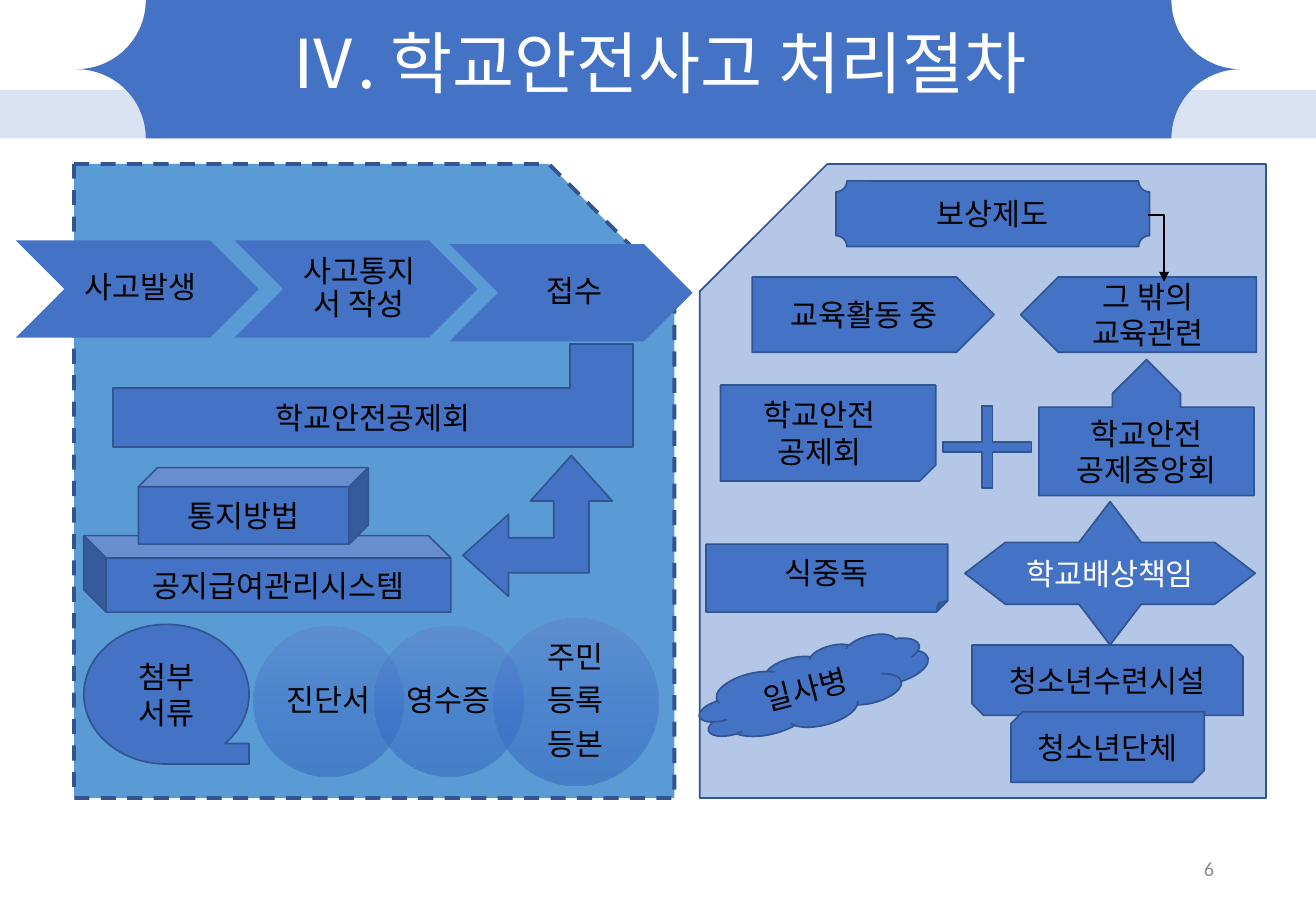
"""Build the slide on the school accident handling procedure."""
from pptx import Presentation
from pptx import util as u
from pptx.dml.color import RGBColor
from pptx.enum import dml, shapes, text
from pptx.oxml import parse_xml
from pptx.oxml.ns import nsdecls, qn

KOREAN = "Noto Sans CJK KR"
BLUE, EDGE, BLACK, WHITE = "4472C4", "325491", "000000", "FFFFFF"
KIND = shapes.MSO_SHAPE


def colour(value):
    return RGBColor.from_string(value)


def write_text(shape, lines, size=18, ink=BLACK, font=KOREAN, align=text.PP_ALIGN.CENTER,
               wrap=True, insets=(0.1, 0.05, 0.1, 0.05), spacing=None, after=None):
    frame = shape.text_frame
    frame_format = {"word_wrap": wrap, "auto_size": text.MSO_AUTO_SIZE.NONE,
                    "vertical_anchor": text.MSO_ANCHOR.MIDDLE}
    for side, inset in zip(("left", "top", "right", "bottom"), insets):
        frame_format["margin_" + side] = u.Inches(inset)
    for name, value in frame_format.items():
        setattr(frame, name, value)
    for index, line in enumerate(lines):
        paragraph = frame.add_paragraph() if index else frame.paragraphs[0]
        paragraph_format = {"alignment": align, "line_spacing": spacing, "space_after": after}
        for name, value in paragraph_format.items():
            setattr(paragraph, name, value)
        run = paragraph.add_run()
        run.text = line
        for name, value in {"size": u.Pt(size), "name": font}.items():
            setattr(run.font, name, value)
        run.font.color.rgb = colour(ink)
        east_asian = run.font._element.makeelement(qn("a:ea"), {"typeface": font})
        run.font._element.find(qn("a:latin")).addnext(east_asian)


presentation = Presentation()
presentation.slide_width, presentation.slide_height = u.Inches(10.83), u.Inches(7.5)
slide = presentation.slides.add_slide(presentation.slide_layouts[5])
title = slide.shapes.title

banner = [
    (KIND.RECTANGLE, 0, 0.74, 10.83, 0.4, [], {"fill": "DAE3F3", "line": None}),
    (KIND.PLAQUE, 0.63, 0, 9.58, 1.14, [], {"adjust": [0.5], "line": None}),
]

tight = {"spacing": 0.9, "after": u.Pt(6.3)}
step = {"line": None, "text": dict(tight, insets=(0.08, 0.03, 0.03, 0.03))}
paper = {"line": None, "glass": True, "text": dict(tight, insets=(0.07, 0.03, 0.07, 0.03))}
reporting = [
    (KIND.SNIP_1_RECTANGLE, 0.61, 1.35, 4.94, 5.22, [],
     {"adjust": [0.209], "fill": "5B9BD5", "weight": 2.25, "dash": dml.MSO_LINE.DASH}),
    (KIND.CORNER, 0.93, 2.83, 4.28, 0.85, ["학교안전공제회"],
     {"adjust": [0.57, 0.609], "flip": True}),
    (KIND.CHEVRON, 0.13, 1.98, 2, 0.8, ["사고발생"], step),
    (KIND.CHEVRON, 1.93, 1.98, 2, 0.8, ["사고통지서 작성"], step),
    (KIND.CHEVRON, 3.7, 2.01, 2, 0.8, ["접수"], step),
    (KIND.LEFT_UP_ARROW, 3.81, 3.75, 1.23, 1.16, [], {"adjust": [0.25, 0.291, 0.324]}),
    (KIND.CUBE, 0.69, 4.41, 3.02, 0.63, ["공지급여관리시스템"],
     {"adjust": [0.293], "flip": True}),
    (KIND.CUBE, 1.14, 3.85, 1.89, 0.63, ["통지방법"], {}),
    (KIND.FLOWCHART_SEQUENTIAL_ACCESS_STORAGE, 0.69, 5.14, 1.36, 1.15, ["첨부", "서류"], {}),
    (KIND.OVAL, 2.09, 5.16, 1.23, 1.23, ["진단서"], paper),
    (KIND.OVAL, 3.08, 5.16, 1.23, 1.23, ["영수증"], paper),
    (KIND.OVAL, 4.06, 5.09, 1.36, 1.38, ["주민", "등록", "등본"], paper),
]

compensation = [
    (KIND.SNIP_1_RECTANGLE, 5.76, 1.35, 4.66, 5.22, [],
     {"adjust": [0.225], "fill": "B4C7E7", "flip": True}),
    (KIND.PLAQUE, 6.88, 1.49, 2.58, 0.54, ["보상제도"], {}),
    (KIND.PENTAGON, 6.19, 2.28, 1.99, 0.62, ["교육활동 중"], {}),
    (KIND.PENTAGON, 8.4, 2.28, 1.94, 0.62, ["그 밖의", "교육관련"], {"flip": True}),
    (KIND.SNIP_1_RECTANGLE, 6.42, 2.68, 0.79, 1.77, [], {"rotation": 90}),
    (KIND.MATH_PLUS, 7.63, 3.22, 0.99, 0.92, [], {"adjust": [0.093]}),
    (KIND.UP_ARROW_CALLOUT, 8.55, 2.96, 1.77, 1.12, ["학교안전", "공제중앙회"],
     {"adjust": [0.5, 0.25, 0.25, 0.65]}),
    (KIND.FOLDED_CORNER, 5.81, 4.48, 1.99, 0.56, ["식중독"], {}),
    (KIND.CLOUD, 5.73, 5.36, 1.94, 0.62, ["일사병"], {"rotation": 345.4}),
    (KIND.QUAD_ARROW, 7.94, 4.13, 2.39, 1.18, ["학교배상책임"],
     {"adjust": [0.45, 0.216, 0.283], "text": {"ink": WHITE}}),
    (KIND.SNIP_2_DIAG_RECTANGLE, 8, 5.31, 2.23, 0.58, ["청소년수련시설"], {}),
    (KIND.SNIP_2_DIAG_RECTANGLE, 8.32, 5.86, 1.59, 0.58, ["청소년단체"], {"flip": True}),
]

glass_stops = "".join(
    f'<a:gs pos="{position}"><a:srgbClr val="{tint}"><a:alpha val="50000"/></a:srgbClr></a:gs>'
    for position, tint in ((0, "6183CB"), (50000, "3E70CA"), (100000, "3062BB")))
glass_fill = (f'<a:gradFill {nsdecls("a")} rotWithShape="1"><a:gsLst>{glass_stops}</a:gsLst>'
              '<a:lin ang="5400000" scaled="0"/></a:gradFill>')

left_group = slide.shapes.add_group_shape()
right_group = slide.shapes.add_group_shape()
for holder, items in ((slide, banner), (left_group, reporting), (right_group, compensation)):
    for kind, left, top, width, height, lines, look in items:
        shape = holder.shapes.add_shape(kind, *map(u.Inches, (left, top, width, height)))
        shape.shadow.inherit = False
        shape.rotation = look.get("rotation", 0)
        for index, value in enumerate(look.get("adjust", [])):
            shape.adjustments[index] = value
        if look.get("flip"):
            shape._element.spPr.xfrm.set("flipH", "1")
        shape.fill.solid()
        shape.fill.fore_color.rgb = colour(look.get("fill", BLUE))
        if look.get("glass"):
            solid = shape._element.spPr.find(qn("a:solidFill"))
            solid.getparent().replace(solid, parse_xml(glass_fill))
        edge = look.get("line", EDGE)
        if edge:
            shape.line.color.rgb = colour(edge)
            shape.line.width = u.Pt(look.get("weight", 1))
            shape.line.dash_style = look.get("dash")
        else:
            shape.line.fill.background()
        if lines:
            write_text(shape, lines, **look.get("text", {}))
for group in (right_group, left_group):
    title._element.addnext(group._element)
for shape in list(slide.shapes)[-2:]:
    title._element.addprevious(shape._element)

arrow = right_group.shapes.add_connector(
    shapes.MSO_CONNECTOR.ELBOW, *map(u.Inches, (9.45, 1.77, 9.58, 2.32)))
arrow.line.color.rgb = colour(BLACK)
arrow.line.width = u.Pt(1.5)
arrow_properties = arrow._element.spPr
arrow_properties.find(qn("a:prstGeom")).set("prst", "bentConnector2")
arrow_properties.find(qn("a:ln")).append(parse_xml(f'<a:tailEnd {nsdecls("a")} type="triangle"/>'))
arrow_properties.append(parse_xml(f'<a:effectLst {nsdecls("a")}/>'))

association = right_group.shapes.add_textbox(*map(u.Inches, (6.14, 3.21, 1.21, 0.71)))
write_text(association, ["학교안전", "공제회"], wrap=False)

title_place = {"left": 1.25, "top": 0, "width": 8.33, "height": 1.09}
for name, value in title_place.items():
    setattr(title, name, u.Inches(value))
write_text(title, ["Ⅳ. 학교안전사고 처리절차"], size=40, ink=WHITE, spacing=0.9)

page_number = slide.shapes.add_textbox(*map(u.Inches, (7.65, 6.95, 2.44, 0.4)))
write_text(page_number, ["6"], size=12, ink="8C8C8C", font="Calibri", align=text.PP_ALIGN.RIGHT)

presentation.save("out.pptx")
